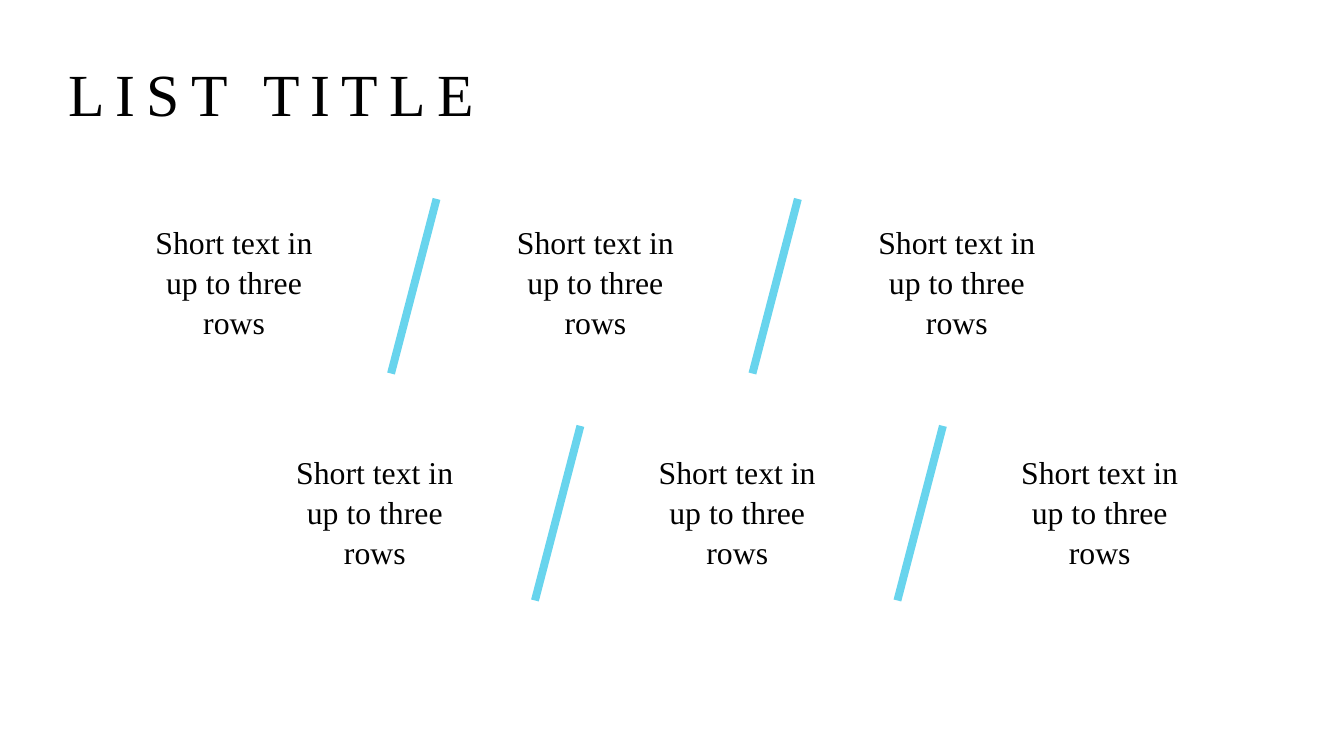
from dataclasses import dataclass

from lxml.etree import SubElement
from pptx import Presentation
from pptx.dml.color import RGBColor
from pptx.enum.text import MSO_ANCHOR, MSO_AUTO_SIZE, PP_ALIGN
from pptx.enum.shapes import MSO_CONNECTOR
from pptx.oxml.ns import qn
from pptx.util import Cm, Pt


@dataclass(frozen=True)
class Theme:
    font: str = "Times New Roman"
    text: RGBColor = RGBColor(0x00, 0x00, 0x00)
    accent: RGBColor = RGBColor(0x68, 0xD4, 0xED)
    title_size: Pt = Pt(32)
    title_tracking: Pt = Pt(6)
    item_size: Pt = Pt(17)
    slash_width: Pt = Pt(4.25)


def apply_format(target, values):
    for name, value in values.items():
        setattr(target, name, value)


class ListSlide:
    def __init__(self, slide, theme):
        self.slide = slide
        self.theme = theme

    def text(self, content, left, top, width, height, size, **paragraph_format):
        """Add a vertically centred text box and return its run."""
        shape = self.slide.shapes.add_textbox(Cm(left), Cm(top), Cm(width), Cm(height))
        apply_format(shape.text_frame, {
            "word_wrap": True,
            "auto_size": MSO_AUTO_SIZE.NONE,
            "vertical_anchor": MSO_ANCHOR.MIDDLE,
        })
        paragraph = shape.text_frame.paragraphs[0]
        apply_format(paragraph, paragraph_format)
        run = paragraph.add_run()
        run.text = content
        apply_format(run.font, {"name": self.theme.font, "size": size})
        run.font.color.rgb = self.theme.text
        return run

    def title(self, content):
        run = self.text(content, 1.04, 0.58, 23.24, 2.36, self.theme.title_size)
        tracking = round(self.theme.title_tracking.pt * 100)
        run.font._element.set("spc", str(tracking))

    def item(self, content, left, top):
        self.text(content, left, top, 4.17, 2.44, self.theme.item_size,
                  alignment=PP_ALIGN.CENTER, line_spacing=1.05)

    def slash(self, left, top):
        """Draw a divider leaning right, given its lower left corner's x and its top."""
        width, height = 0.86, 3.3
        connector = self.slide.shapes.add_connector(
            MSO_CONNECTOR.STRAIGHT,
            Cm(left + width), Cm(top), Cm(left), Cm(top + height))
        connector.line.color.rgb = self.theme.accent
        connector.line.width = self.theme.slash_width
        SubElement(connector._element.spPr, qn("a:effectLst"))

    def row(self, items, item_left, item_top, slash_left, slash_top, pitch):
        """Place items at equal steps with a slash between neighbours."""
        for index, content in enumerate(items):
            if index < len(items) - 1:
                self.slash(slash_left + index * pitch, slash_top)
            self.item(content, item_left + index * pitch, item_top)


def main():
    presentation = Presentation()
    presentation.slide_width = Cm(25.4)
    presentation.slide_height = Cm(14.29)
    slide = presentation.slides.add_slide(presentation.slide_layouts[6])
    list_slide = ListSlide(slide, Theme())

    items = ["Short text in up to three rows"] * 3
    list_slide.title("LIST TITLE")
    list_slide.row(items, item_left=2.34, item_top=4.09,
                   slash_left=7.39, slash_top=3.76, pitch=6.83)
    list_slide.row(items, item_left=5, item_top=8.43,
                   slash_left=10.11, slash_top=8.05, pitch=6.85)
    presentation.save("out.pptx")


if __name__ == "__main__":
    main()
